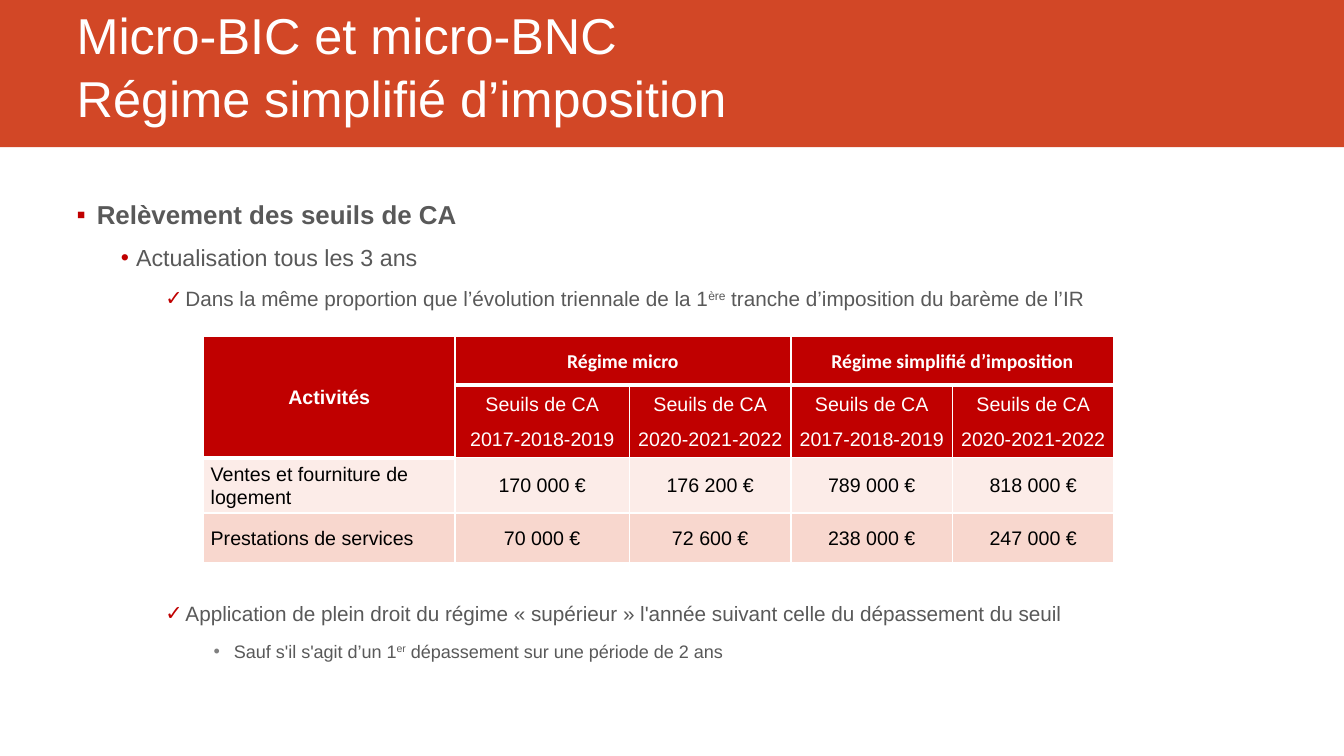
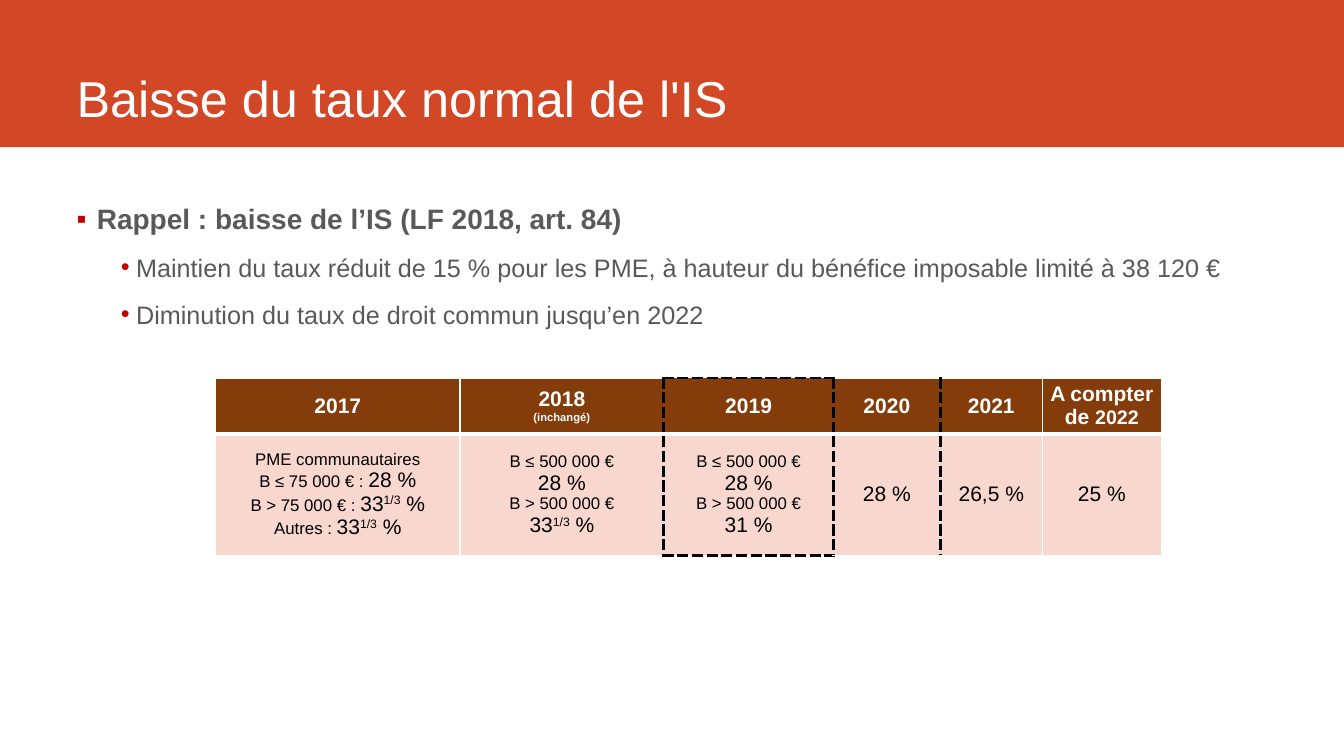
import lxml.etree
import pptx
import pptx.dml.color
import pptx.enum.shapes
import pptx.enum.text
import pptx.oxml.ns
import pptx.util

WIDE, HIGH = 13.33, 7.5
BRICK, RED, GRAY, MID = "D24726", "C00000", "595959", "808080"
WHITE, BLACK, BROWN = "FFFFFF", "000000", "843C0B"
PALE, ROSE = "FCECE8", "F8D7CE"
ALIGN = pptx.enum.text.PP_ALIGN
ANCHOR = pptx.enum.text.MSO_ANCHOR

# Left, top, width and height as percent of the slide
BAND = (0, 0, 100, 19.47)
HEAD = (4.95, 0, 88.2, 17.6)
BODY = (4.95, 26.67, 88.2, 63.47)

# List levels: bullet, its colour, text indent and hang in inches
LEVELS = [("▪", RED, 0.3, -0.2), ("•", RED, 0.69, -0.15),
          ("✓", RED, 1.18, -0.2), ("•", MID, 1.66, -0.2)]

# Cell edges: colour, points, dash
THIN, THICK, DASH = (WHITE, 1, "solid"), (WHITE, 3, "solid"), (BLACK, 2.25, "dash")


def color(code):
    return pptx.dml.color.RGBColor.from_string(code)


def inch(size):
    return pptx.util.Inches(size)


def frame(box):
    """Turn percent of the slide into lengths."""
    sides = (WIDE, HIGH, WIDE, HIGH)
    return [inch(side * part / 100) for side, part in zip(sides, box)]


def style(item, values):
    for name, value in values.items():
        setattr(item, name, value)


def place(shape, box):
    style(shape, dict(zip(("left", "top", "width", "height"), frame(box))))


def margins(side, end):
    return {"margin_left": inch(side), "margin_right": inch(side),
            "margin_top": inch(end), "margin_bottom": inch(end)}


def node(parent, tag, **values):
    return lxml.etree.SubElement(parent, pptx.oxml.ns.qn("a:" + tag), values)


def write(para, text, size, tint, bold=False, face="Arial"):
    """Add text; parts between ^ marks are raised."""
    for index, part in enumerate(text.split("^")):
        run = para.add_run()
        run.text = part
        style(run.font, {"name": face, "size": pptx.util.Pt(size), "bold": bold})
        run.font.color.rgb = color(tint)
        if index % 2:
            run.font._element.set("baseline", "30000")


def space(para, line, before, after):
    style(para, {"line_spacing": line, "space_before": pptx.util.Pt(before),
                 "space_after": pptx.util.Pt(after)})


# Shared parts
def add_band(slide):
    """Draw the band once, on the layout behind the placeholders."""
    band = slide.shapes.add_shape(
        pptx.enum.shapes.MSO_SHAPE.RECTANGLE, *frame(BAND))
    band.shadow.inherit = False
    band.fill.solid()
    band.fill.fore_color.rgb = color(BRICK)
    band.line.fill.background()
    slide.slide_layout.shapes.element.insert(2, band.element)


def add_title(slide, lines):
    title = slide.shapes.title
    place(title, HEAD)
    text = title.text_frame
    style(text, {"vertical_anchor": ANCHOR.BOTTOM, "word_wrap": True,
                 "auto_size": pptx.enum.text.MSO_AUTO_SIZE.NONE})
    para = text.paragraphs[0]
    style(para, {"alignment": ALIGN.LEFT, "line_spacing": 1.05})
    for index, line in enumerate(lines):
        if index:
            para.add_line_break()
        write(para, line, 36, WHITE)


def add_list(slide, items, sizes, line):
    """Each item is its level, its text and the space before it."""
    body = slide.placeholders[1]
    place(body, BODY)
    text = body.text_frame
    style(text, {**margins(0, 0), "vertical_anchor": ANCHOR.TOP, "word_wrap": True,
                 "auto_size": pptx.enum.text.MSO_AUTO_SIZE.NONE})
    for index, (level, words, before) in enumerate(items):
        para = text.add_paragraph() if index else text.paragraphs[0]
        mark, tint, left, hang = LEVELS[level]
        style(para, {"level": level, "alignment": ALIGN.LEFT})
        space(para, line, before, 6)
        props = para._p.get_or_add_pPr()
        props.set("marL", str(inch(left)))
        props.set("indent", str(inch(hang)))
        node(node(props, "buClr"), "srgbClr", val=tint)
        node(props, "buFont", typeface="Arial")
        node(props, "buChar", char=mark)
        write(para, words, sizes[level], GRAY, bold=level == 0)


# Tables
def add_edge(cell, side, look):
    tint, width, dash = look
    line = node(cell._tc.get_or_add_tcPr(), "ln" + side, w=str(pptx.util.Pt(width)))
    node(node(line, "solidFill"), "srgbClr", val=tint)
    node(line, "prstDash", val=dash)


def add_grid(slide, box, cols, rows, edges):
    """Make a bare table; edges maps grid lines to looks other than thin."""
    shape = slide.shapes.add_table(len(rows), len(cols), *frame(box))
    table = shape.table
    style(table, {"first_row": False, "horz_banding": False})
    wide, high = shape.width, shape.height
    for col, part in zip(table.columns, cols):
        col.width = int(wide * part / sum(cols))
    for row, part in zip(table.rows, rows):
        row.height = int(high * part / sum(rows))
    for r in range(len(rows)):
        for c in range(len(cols)):
            lines = {"L": ("v", r, c), "R": ("v", r, c + 1),
                     "T": ("h", r, c), "B": ("h", r + 1, c)}
            for side, key in lines.items():
                add_edge(table.cell(r, c), side, edges.get(key, THIN))
    return table


def fill_cell(cell, paras, back, tint, pads, line=1, after=0,
              align=ALIGN.CENTER, **font):
    """Each paragraph is a list of (text, size) parts."""
    cell.fill.solid()
    cell.fill.fore_color.rgb = color(back)
    style(cell, {**margins(*pads), "vertical_anchor": ANCHOR.MIDDLE})
    for index, parts in enumerate(paras):
        text = cell.text_frame
        para = text.add_paragraph() if index else text.paragraphs[0]
        para.alignment = align
        space(para, line, 0, after)
        for words, size in parts:
            write(para, words, size, tint, **font)


def add_limits(slide):
    edges = {("h", 1, c): THICK for c in range(1, 5)}
    edges["h", 2, 0] = THICK
    table = add_grid(slide, (15.15, 44.53, 67.74, 29.8),
                     (2.49, 1.73, 1.6, 1.6, 1.6), (0.48, 0.72, 0.54, 0.49), edges)
    spans = [((0, 0), (1, 0)), ((0, 1), (0, 2)), ((0, 3), (0, 4))]
    for start, end in spans:
        table.cell(*start).merge(table.cell(*end))
    past, new = [["Seuils de CA", years] for years in
                 ("2017-2018-2019", "2020-2021-2022")]
    cells = [
        [["Activités"], ["Régime micro"], None, ["Régime simplifié d’imposition"], None],
        [None, past, new, past, new],
        [["Ventes et fourniture de logement"], ["170 000 €"], ["176 200 €"],
         ["789 000 €"], ["818 000 €"]],
        [["Prestations de services"], ["70 000 €"], ["72 600 €"],
         ["238 000 €"], ["247 000 €"]],
    ]
    for r, row in enumerate(cells):
        for c, lines in enumerate(row):
            if lines is None:
                continue
            tight = r > 0 and c in (2, 4)
            fill_cell(table.cell(r, c), [[(line, 14)] for line in lines],
                      (RED, RED, PALE, ROSE)[r], WHITE if r < 2 else BLACK,
                      (0, 0) if tight else (0.07, 0.04), line=1.07, after=8,
                      align=ALIGN.LEFT if r > 1 and c == 0 else ALIGN.CENTER,
                      bold=r == 0, face="Calibri" if r == 0 and c else "Arial")


def add_rates(slide):
    edges = {("h", 1, c): THICK for c in range(6)}
    edges.update({("v", r, c): DASH for r in range(2) for c in (2, 3, 4)})
    edges.update({("h", r, 2): DASH for r in (0, 2)})
    table = add_grid(slide, (16.05, 50, 70.37, 23.47),
                     (2.42, 2.02, 1.68, 1.06, 1.01, 1.18), (0.55, 1.2), edges)
    third = ("33^1/3^ %", 15)
    low, high = [("B ≤ 500 000 €", 12)], [("B > 500 000 €", 12)]
    rate = [("28 %", 15)]
    heads = [[[("2017", 15)]], [[("2018", 15)], [("(inchangé)", 8)]],
             [[("2019", 15)]], [[("2020", 15)]], [[("2021", 15)]],
             [[("A compter de ", 15), ("2022", 14)]]]
    rates = [
        [[("PME communautaires", 12)],
         [("B ≤ 75 000 € : ", 12), *rate],
         [("B > 75 000 € : ", 12), third],
         [("Autres : ", 12), third]],
        [low, rate, high, [third]],
        [low, rate, high, [("31 %", 15)]],
        [rate], [[("26,5 %", 15)]], [[("25 %", 15)]],
    ]
    looks = [(heads, BROWN, WHITE, True), (rates, ROSE, BLACK, False)]
    for r, (row, back, tint, bold) in enumerate(looks):
        for c, paras in enumerate(row):
            fill_cell(table.cell(r, c), paras, back, tint, (0.06, 0.03), bold=bold)


def main():
    deck = pptx.Presentation()
    style(deck, {"slide_width": inch(WIDE), "slide_height": inch(HIGH)})
    first, second = [deck.slides.add_slide(deck.slide_layouts[1]) for _ in range(2)]
    add_band(first)

    # Thresholds; the wide gap leaves room for the table
    add_title(first, ["Micro-BIC et micro-BNC", "Régime simplifié d’imposition"])
    add_list(first, [
        (0, "Relèvement des seuils de CA", 6),
        (1, "Actualisation tous les 3 ans", 6),
        (2, "Dans la même proportion que l’évolution triennale de la 1^ère^ "
            "tranche d’imposition du barème de l’IR", 6),
        (2, "Application de plein droit du régime « supérieur » l'année suivant "
            "celle du dépassement du seuil", 203),
        (3, "Sauf s'il s'agit d’un 1^er^ dépassement sur une période de 2 ans", 6),
    ], (18.5, 16.6, 14.8, 12.9), 0.9)
    add_limits(first)

    # Tax rates by year
    add_title(second, ["Baisse du taux normal de l'IS"])
    add_list(second, [
        (0, "Rappel : baisse de l’IS (LF 2018, art. 84)", 6),
        (1, "Maintien du taux réduit de 15 % pour les PME, à hauteur du bénéfice "
            "imposable limité à 38 120 €", 6),
        (1, "Diminution du taux de droit commun jusqu’en 2022", 6),
    ], (20, 18), 1.0)
    add_rates(second)
    deck.save("out.pptx")


if __name__ == "__main__":
    main()
